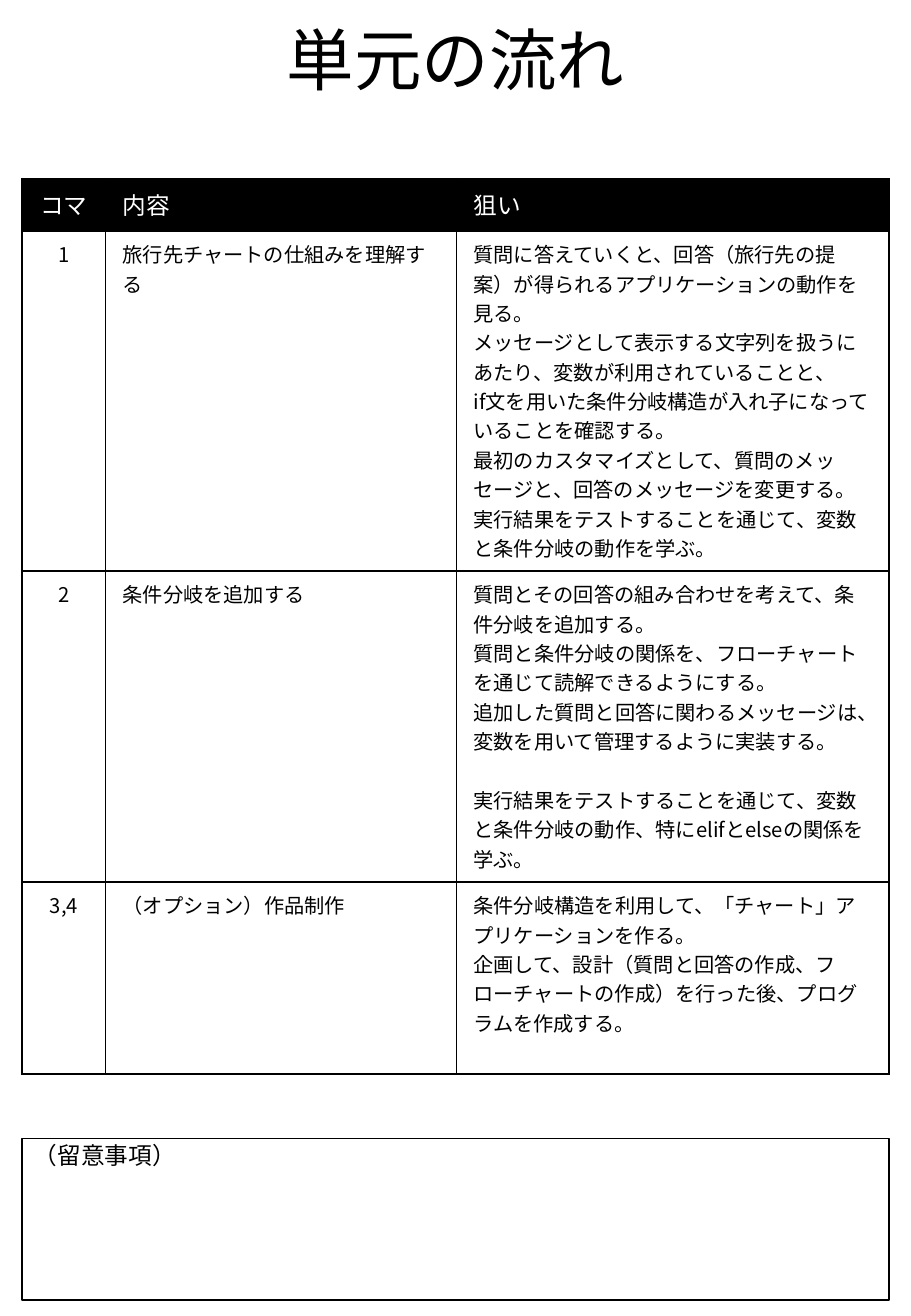
import pptx
import pptx.util
import pptx.dml.color
import pptx.enum.lang
import pptx.enum.shapes
import pptx.enum.text
import pptx.oxml
import pptx.oxml.ns

Pt = pptx.util.Pt
ALIGN = pptx.enum.text.PP_ALIGN
ANCHOR = pptx.enum.text.MSO_ANCHOR
FONT = "Noto Sans CJK JP"
BLACK, WHITE = "000000", "FFFFFF"


def rgb(value):
    return pptx.dml.color.RGBColor.from_string(value)


def write(p, text, size, color=BLACK, **formats):
    r = p.add_run()
    r.text = text
    r.font.size, r.font.name = Pt(size), FONT
    r.font.color.rgb = rgb(color)
    r.font.language_id = pptx.enum.lang.MSO_LANGUAGE_ID.JAPANESE
    ea = pptx.oxml.parse_xml(
        f'<a:ea {pptx.oxml.ns.nsdecls("a")} typeface="{FONT}"/>')
    r.font._element.find(pptx.oxml.ns.qn("a:latin")).addnext(ea)
    for name, value in formats.items():
        setattr(p, name, value)


prs = pptx.Presentation()
prs.slide_width, prs.slide_height = Pt(540), Pt(779.76)
s = prs.slides.add_slide(prs.slide_layouts[5])

# Title
title = s.shapes.title
title.left, title.top, title.width, title.height = Pt(40.5), Pt(4.5), Pt(459), Pt(58.5)
tf = title.text_frame
tf.auto_size = pptx.enum.text.MSO_AUTO_SIZE.NONE
tf.vertical_anchor = ANCHOR.BOTTOM
write(tf.paragraphs[0], "単元の流れ", 40, alignment=ALIGN.CENTER, line_spacing=0.9)

# Lesson table: each cell is a list of paragraphs
lessons = [
    [["コマ"], ["内容"], ["狙い"]],
    [["1"], ["旅行先チャートの仕組みを理解する"], [
        "質問に答えていくと、回答（旅行先の提案）が得られるアプリケーションの動作を見る。",
        "メッセージとして表示する文字列を扱うにあたり、変数が利用されていることと、",
        "if文を用いた条件分岐構造が入れ子になっていることを確認する。",
        "最初のカスタマイズとして、質問のメッセージと、回答のメッセージを変更する。"
        "実行結果をテストすることを通じて、変数と条件分岐の動作を学ぶ。"]],
    [["2"], ["条件分岐を追加する"], [
        "質問とその回答の組み合わせを考えて、条件分岐を追加する。",
        "質問と条件分岐の関係を、フローチャートを通じて読解できるようにする。",
        "追加した質問と回答に関わるメッセージは、変数を用いて管理するように実装する。",
        "実行結果をテストすることを通じて、変数と条件分岐の動作、"
        "特にelifとelseの関係を学ぶ。"]],
    [["3,4"], ["（オプション）作品制作"], [
        "条件分岐構造を利用して、「チャート」アプリケーションを作る。",
        "企画して、設計（質問と回答の作成、フローチャートの作成）を行った後、"
        "プログラムを作成する。"]],
]
col_widths = [49.7, 208, 256.3]
row_heights = [31, 201.5, 184.3, 113.8]
left, width = 13, sum(col_widths)
table = s.shapes.add_table(len(row_heights), len(col_widths), Pt(left), Pt(105.8),
                           Pt(width), Pt(sum(row_heights))).table
for column, value in zip(table.columns, col_widths):
    column.width = Pt(value)
for row, value in zip(table.rows, row_heights):
    row.height = Pt(value)

margins = {"margin_left": 10, "margin_right": 10, "margin_top": 5, "margin_bottom": 5}
for i, lesson in enumerate(lessons):
    size, ink, paper = (12, BLACK, WHITE) if i else (14, WHITE, BLACK)
    for j, paragraphs in enumerate(lesson):
        cell = table.cell(i, j)
        for name, value in margins.items():
            setattr(cell, name, Pt(value))
        for side in "LRTB":
            cell._tc.get_or_add_tcPr().append(pptx.oxml.parse_xml(
                f'<a:ln{side} {pptx.oxml.ns.nsdecls("a")} w="12700"><a:solidFill>'
                f'<a:srgbClr val="{BLACK}"/></a:solidFill></a:ln{side}>'))
        cell.fill.solid()
        cell.fill.fore_color.rgb = rgb(paper)
        tf = cell.text_frame
        for k, text in enumerate(paragraphs):
            p = tf.add_paragraph() if k else tf.paragraphs[0]
            write(p, text, size, ink, alignment=ALIGN.LEFT if j else ALIGN.CENTER)

# One line of space before the last aim of lesson 2
table.cell(2, 2).text_frame.paragraphs[-1].space_before = Pt(17.4)

# Notes box
sp = s.shapes.add_shape(pptx.enum.shapes.MSO_SHAPE.RECTANGLE,
                        Pt(left), Pt(674.6), Pt(width), Pt(95.8))
sp.shadow.inherit = False
sp.fill.solid()
sp.fill.fore_color.rgb = rgb(WHITE)
sp.line.color.rgb = rgb(BLACK)
sp.line.width = Pt(1)
tf = sp.text_frame
tf.word_wrap = True
tf.vertical_anchor = ANCHOR.TOP
write(tf.paragraphs[0], "（留意事項）", 14, alignment=ALIGN.LEFT, line_spacing=0.9)

prs.save("out.pptx")
